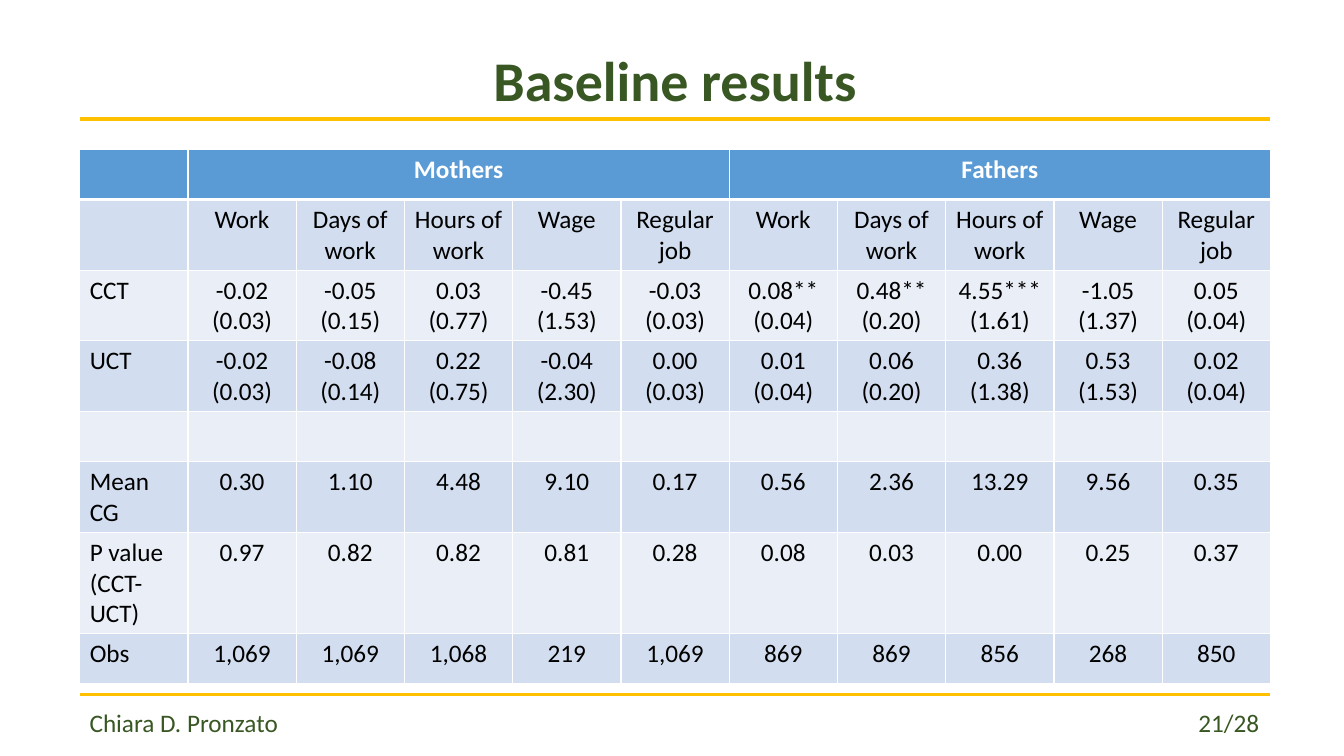
from lxml.etree import SubElement
from pptx import Presentation
from pptx.dml.color import RGBColor
from pptx.enum.shapes import MSO_CONNECTOR
from pptx.enum.text import MSO_ANCHOR, PP_ALIGN
from pptx.oxml.ns import qn
from pptx.util import Inches, Pt

COLORS = {
    "green": "385723",
    "gold": "FFC000",
    "header": "5B9BD5",
    "band_dark": "D2DEEF",
    "band_light": "EAEFF7",
    "white": "FFFFFF",
    "black": "000000",
}
FONT = "Calibri"
LEFT, WIDTH = 0.79, 11.81
OUTCOMES = ["Work", "Days of work", "Hours of work", "Wage", "Regular job"]
ROWS = [
    ["", "Mothers", "", "", "", "", "Fathers", "", "", "", ""],
    [""] + OUTCOMES * 2,
    ["CCT", "-0.02\n(0.03)", "-0.05 (0.15)", "0.03 (0.77)", "-0.45 (1.53)", "-0.03 (0.03)",
     "0.08** (0.04)", "0.48** (0.20)", "4.55*** (1.61)", "-1.05 (1.37)", "0.05 (0.04)"],
    ["UCT", "-0.02 (0.03)", "-0.08 (0.14)", "0.22 (0.75)", "-0.04 (2.30)", "0.00 (0.03)",
     "0.01 (0.04)", "0.06 (0.20)", "0.36 (1.38)", "0.53 (1.53)", "0.02 (0.04)"],
    [""] * 11,
    ["Mean CG", "0.30", "1.10", "4.48", "9.10", "0.17", "0.56", "2.36", "13.29", "9.56", "0.35"],
    ["P value (CCT-UCT)", "0.97", "0.82", "0.82", "0.81", "0.28",
     "0.08", "0.03", "0.00", "0.25", "0.37"],
    ["Obs", "1,069", "1,069", "1,068", "219", "1,069", "869", "869", "856", "268", "850"],
]
ROW_HEIGHTS = [0.5, 0.7, 0.7, 0.7, 0.5, 0.7, 1.0, 0.5]


def rgb(name):
    return RGBColor.from_string(COLORS[name])


def format_paragraph(p, size, color, bold=False, align=PP_ALIGN.LEFT):
    p.alignment = align
    p.font.name = FONT
    p.font.size = Pt(size)
    p.font.bold = bold
    p.font.color.rgb = rgb(color)


def add_title(s, text):
    title = s.shapes.title
    title.left, title.top = Inches(LEFT), Inches(0)
    title.width, title.height = Inches(WIDTH), Inches(1.25)
    tf = title.text_frame
    tf.text = text
    tf.vertical_anchor = MSO_ANCHOR.BOTTOM
    tf.margin_bottom = Inches(0.12)
    p = tf.paragraphs[0]
    p.line_spacing = 0.9
    format_paragraph(p, 40, "green", True, PP_ALIGN.CENTER)


def add_rule(s, y):
    rule = s.shapes.add_connector(
        MSO_CONNECTOR.STRAIGHT, Inches(LEFT), Inches(y), Inches(LEFT + WIDTH), Inches(y))
    rule.line.color.rgb = rgb("gold")
    rule.line.width = Pt(2.25)
    SubElement(rule.element.spPr, qn("a:effectLst"))


def add_footer(s, author, page):
    box = s.shapes.add_textbox(Inches(LEFT), Inches(6.97), Inches(WIDTH), Inches(0.4))
    tf = box.text_frame
    tf.word_wrap = True
    p = tf.paragraphs[0]
    p.text = f"{author}\t{page}"
    tabs = SubElement(p._p.get_or_add_pPr(), qn("a:tabLst"))
    SubElement(tabs, qn("a:tab"), pos=str(Inches(WIDTH - 0.21)), algn="r")
    format_paragraph(p, 18, "green")


def add_borders(cell, bottom):
    tcPr = cell._tc.get_or_add_tcPr()
    for side, width in (("L", 1), ("R", 1), ("T", 1), ("B", bottom)):
        ln = SubElement(tcPr, qn(f"a:ln{side}"), w=str(Pt(width)))
        fill = SubElement(ln, qn("a:solidFill"))
        SubElement(fill, qn("a:srgbClr"), val=COLORS["white"])


def format_cell(cell, text, row, col):
    header = row == 0
    add_borders(cell, 3 if header else 1)
    cell.fill.solid()
    band = "band_dark" if row % 2 else "band_light"
    cell.fill.fore_color.rgb = rgb("header" if header else band)
    cell.text = text
    for p in cell.text_frame.paragraphs:
        format_paragraph(p, 18, "white" if header else "black", header,
                         PP_ALIGN.CENTER if col else PP_ALIGN.LEFT)


def add_results_table(s):
    n_cols = len(ROWS[0])
    table = s.shapes.add_table(
        len(ROWS), n_cols, Inches(LEFT), Inches(1.48),
        Inches(WIDTH), Inches(sum(ROW_HEIGHTS))).table
    for column in table.columns:
        column.width = Inches(WIDTH / n_cols)
    for i, (values, height) in enumerate(zip(ROWS, ROW_HEIGHTS)):
        table.rows[i].height = Inches(height)
        for j, text in enumerate(values):
            format_cell(table.cell(i, j), text, i, j)
    for first in (1, 6):
        table.cell(0, first).merge(table.cell(0, first + 4))


def main():
    prs = Presentation()
    prs.slide_width, prs.slide_height = Inches(13.33), Inches(7.5)
    s = prs.slides.add_slide(prs.slide_layouts[5])
    add_title(s, "Baseline results")
    for y in (1.18, 6.89):
        add_rule(s, y)
    add_footer(s, "Chiara D. Pronzato", "21/28")
    add_results_table(s)
    prs.save("out.pptx")


if __name__ == "__main__":
    main()
